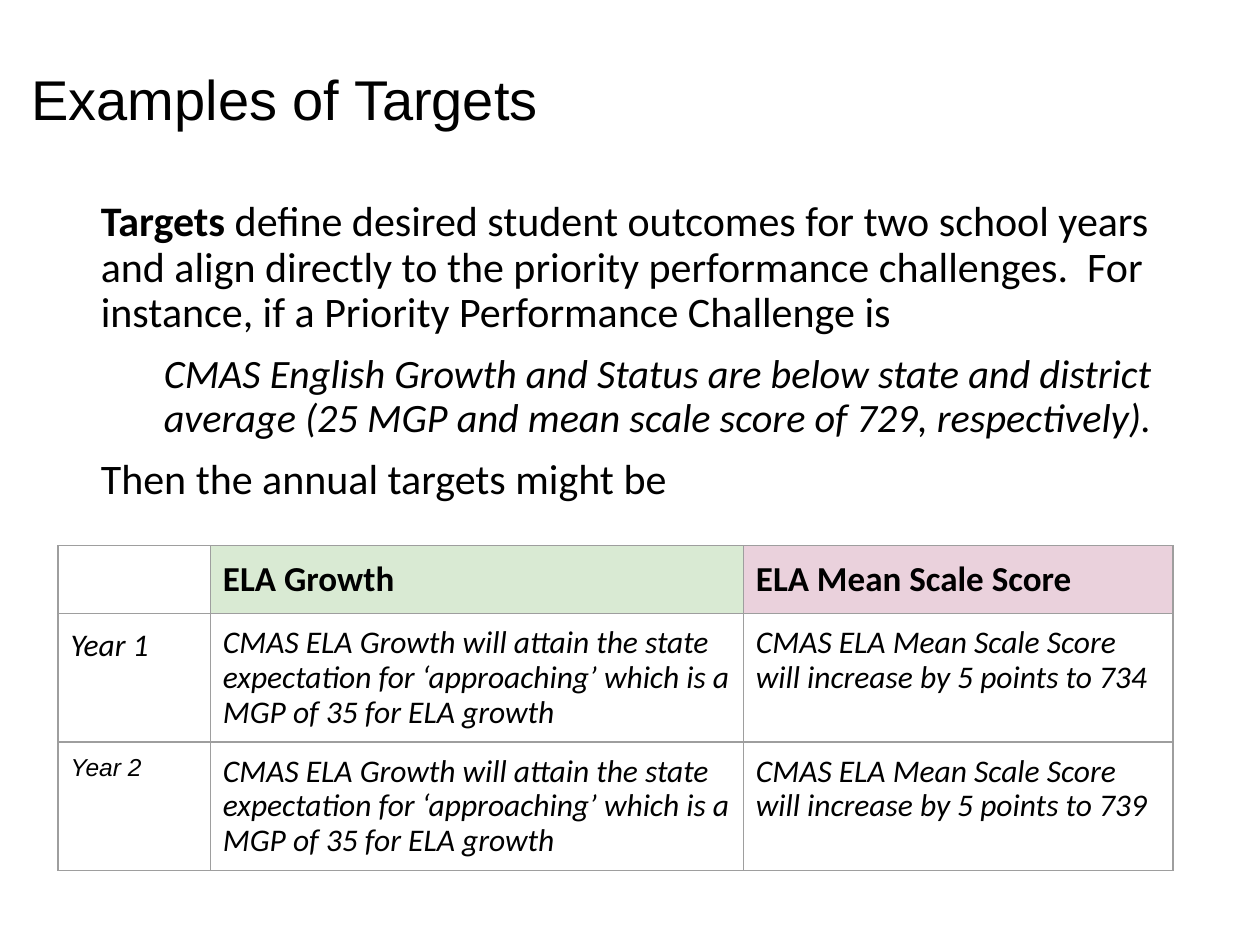
from pptx import Presentation
from pptx.dml.color import RGBColor
from pptx.enum.text import MSO_ANCHOR, PP_ALIGN
from pptx.oxml import parse_xml
from pptx.oxml.ns import nsdecls
from pptx.util import Inches, Pt

COLORS = {
    "text": "000000",
    "border": "9E9E9E",
    "blank": "FFFFFF",
    "growth": "D9EAD3",
    "score": "EAD1DC",
}
GROWTH_TARGET = ("CMAS ELA Growth will attain the state expectation for "
                 "‘approaching’ which is a MGP of 35 for ELA growth")
SCORE_TARGET = "CMAS ELA Mean Scale Score will increase by 5 points to {}"


def add_text(paragraph, text, size=18, font="Calibri", bold=False, italic=False,
             line_spacing=None):
    """Add one formatted run to a paragraph."""
    paragraph.alignment = PP_ALIGN.LEFT
    if line_spacing:
        paragraph.line_spacing = line_spacing
    run = paragraph.add_run()
    run.text = text
    run.font.size = Pt(size)
    run.font.name = font
    run.font.bold = bold
    run.font.italic = italic
    run.font.color.rgb = RGBColor.from_string(COLORS["text"])


def set_frame(text_frame, anchor, bottom=0):
    text_frame.word_wrap = True
    text_frame.vertical_anchor = anchor
    text_frame.margin_left = text_frame.margin_right = text_frame.margin_top = 0
    text_frame.margin_bottom = Inches(bottom)


def add_title(slide, text):
    title = slide.shapes.title
    title.left, title.top = Inches(0.25), Inches(0.47)
    title.width, title.height = Inches(9.5), Inches(0.62)
    set_frame(title.text_frame, MSO_ANCHOR.MIDDLE)
    add_text(title.text_frame.paragraphs[0], text, size=32, font="Arial")


def add_body(slide):
    box = slide.shapes.add_textbox(Inches(0.8), Inches(1.59), Inches(8.62), Inches(5.08))
    frame = box.text_frame
    set_frame(frame, MSO_ANCHOR.TOP, bottom=0.05)

    definition = frame.paragraphs[0]
    add_text(definition, "Targets ", size=24, bold=True, line_spacing=0.9)
    add_text(definition, "define desired student outcomes for two school years and align "
             "directly to the priority performance challenges.  For instance, if a "
             "Priority Performance Challenge is", size=24)

    challenge = frame.add_paragraph()
    challenge.space_before = Pt(10)
    challenge._p.get_or_add_pPr().set("marL", str(Inches(0.5)))
    add_text(challenge, "CMAS English Growth and Status are below state and district "
             "average (25 MGP and mean scale score of 729, respectively).",
             size=23, italic=True, line_spacing=0.9)

    lead_in = frame.add_paragraph()
    lead_in.space_before = Pt(10)
    add_text(lead_in, "Then the annual targets might be", size=24, line_spacing=0.9)


def format_cell(cell, fill):
    """Set margins, borders and fill of a table cell."""
    cell.margin_left = cell.margin_right = Inches(0.1)
    cell.margin_top = cell.margin_bottom = Inches(0.1)
    properties = cell._tc.get_or_add_tcPr()
    for side in ("lnL", "lnR", "lnT", "lnB"):
        properties.append(parse_xml(
            f'<a:{side} {nsdecls("a")} w="{Pt(0.75)}"><a:solidFill>'
            f'<a:srgbClr val="{COLORS["border"]}"/></a:solidFill></a:{side}>'))
    cell.fill.solid()
    cell.fill.fore_color.rgb = RGBColor.from_string(COLORS[fill])


def add_targets_table(slide):
    heading = {"size": 20, "bold": True}
    target = {"italic": True, "line_spacing": 0.9}
    rows = [
        [("", {}), ("ELA Growth", heading), ("ELA Mean Scale Score", heading)],
        [("Year 1", {"italic": True}),
         (GROWTH_TARGET, target), (SCORE_TARGET.format(734), target)],
        [("Year 2", {"size": 14, "font": "Arial", "italic": True}),
         (GROWTH_TARGET, target), (SCORE_TARGET.format(739), target)],
    ]
    widths = [1.21, 4.23, 3.41]
    heights = [0.54, 1.02, 1.02]
    heading_fills = ["blank", "growth", "score"]

    table = slide.shapes.add_table(
        len(rows), len(widths), Inches(0.46), Inches(4.33),
        Inches(sum(widths)), Inches(sum(heights))).table
    table.horz_banding = False
    for column, width in zip(table.columns, widths):
        column.width = Inches(width)
    for row, height in zip(table.rows, heights):
        row.height = Inches(height)

    for row_index, row in enumerate(rows):
        for column_index, (text, style) in enumerate(row):
            cell = table.cell(row_index, column_index)
            format_cell(cell, heading_fills[column_index] if row_index == 0 else "blank")
            if text:
                add_text(cell.text_frame.paragraphs[0], text, **style)


def main():
    presentation = Presentation()
    presentation.slide_width, presentation.slide_height = Inches(10), Inches(7.5)
    slide = presentation.slides.add_slide(presentation.slide_layouts[5])
    add_title(slide, "Examples of Targets")
    add_body(slide)
    add_targets_table(slide)
    presentation.save("out.pptx")


if __name__ == "__main__":
    main()
